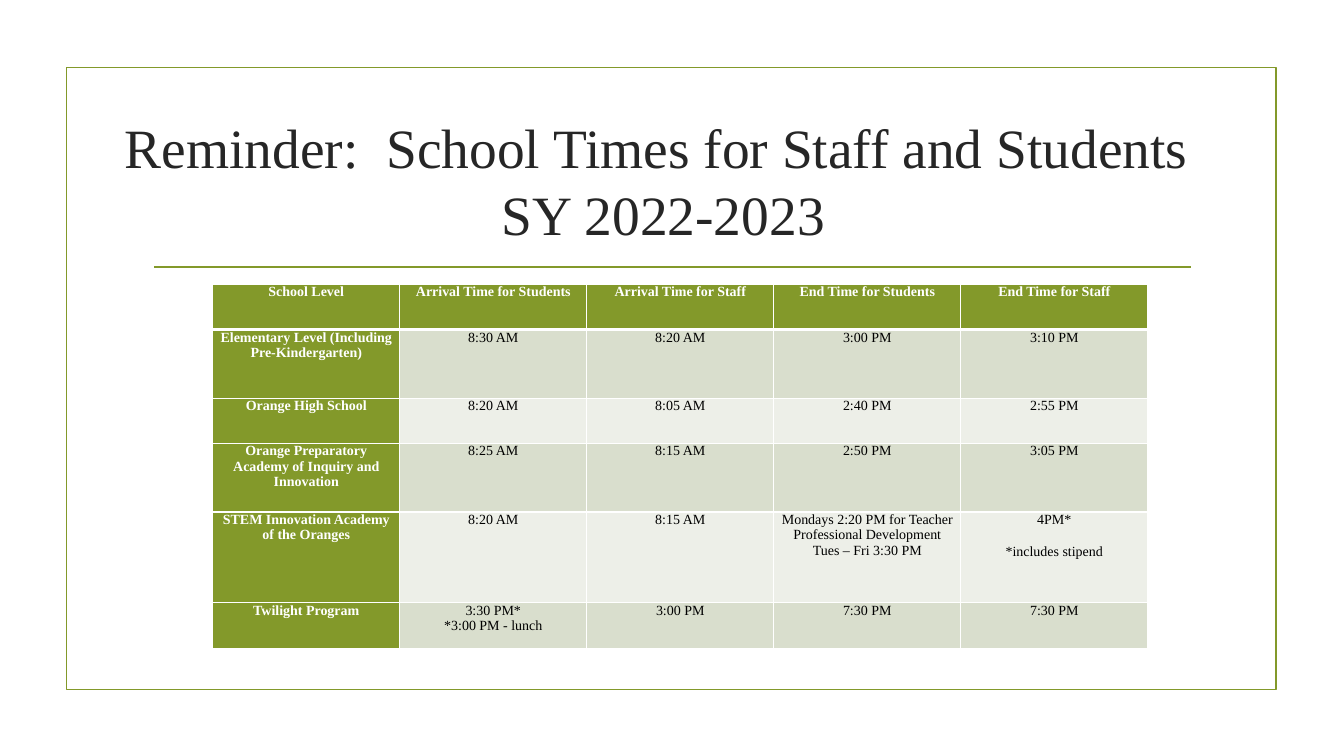
from lxml import etree
from pptx import Presentation
from pptx.dml.color import RGBColor
from pptx.enum.shapes import MSO_CONNECTOR, MSO_SHAPE
from pptx.enum.text import MSO_ANCHOR, PP_ALIGN
from pptx.oxml.ns import qn
from pptx.util import Inches, Pt

TITLE = ["Reminder:  School Times for Staff and Students ", "SY 2022-2023"]

# A cell with several paragraphs is a list.
SCHOOL_TIMES = [
    ["School Level", "Arrival Time for Students", "Arrival Time for Staff",
     "End Time for Students", "End Time for Staff"],
    ["Elementary Level (Including Pre-Kindergarten)",
     "8:30 AM", "8:20 AM", "3:00 PM", "3:10 PM"],
    ["Orange High School", "8:20 AM", "8:05 AM", "2:40 PM", "2:55 PM"],
    ["Orange Preparatory Academy of Inquiry and Innovation",
     "8:25 AM", "8:15 AM", "2:50 PM", "3:05 PM"],
    ["STEM Innovation Academy of the Oranges", "8:20 AM", "8:15 AM",
     ["Mondays 2:20 PM for Teacher Professional Development", "Tues – Fri 3:30 PM"],
     ["4PM*", "*includes stipend"]],
    ["Twilight Program", ["3:30 PM*", "*3:00 PM - lunch"],
     "3:00 PM", "7:30 PM", "7:30 PM"],
]
ROW_HEIGHTS = [0.45, 0.68, 0.45, 0.68, 0.9, 0.45]
COLUMN_WIDTH = 1.855
GAP_BEFORE = {"*includes stipend": Pt(11.5)}

FONT = "Times New Roman"
GREEN = RGBColor(0x83, 0x99, 0x2A)
DARK_BAND = RGBColor(0xD9, 0xDE, 0xCD)
LIGHT_BAND = RGBColor(0xED, 0xEF, 0xE8)
INK = RGBColor(0x26, 0x26, 0x26)
BLACK = RGBColor(0, 0, 0)
WHITE = RGBColor(0xFF, 0xFF, 0xFF)
CENTER = PP_ALIGN.CENTER
MIDDLE = MSO_ANCHOR.MIDDLE
TOP = MSO_ANCHOR.TOP
STRAIGHT = MSO_CONNECTOR.STRAIGHT
RECTANGLE = MSO_SHAPE.RECTANGLE


def add_span(para, text, size, color, bold=False):
    span = para.add_run()
    span.text = text
    span.font.name = FONT
    span.font.size = Pt(size)
    span.font.bold = bold
    span.font.color.rgb = color


def set_borders(cell, top, bottom):
    """Give the cell white borders; top and bottom are widths in points."""
    properties = cell._tc.get_or_add_tcPr()
    widths = {"lnL": 1, "lnR": 1, "lnT": top, "lnB": bottom}
    for index, (side, width) in enumerate(widths.items()):
        line = etree.Element(qn(f"a:{side}"), w=str(Pt(width)))
        fill = etree.SubElement(line, qn("a:solidFill"))
        etree.SubElement(fill, qn("a:srgbClr"), val=str(WHITE))
        properties.insert(index, line)


def add_frame(page):
    frame = page.shapes.add_shape(
        RECTANGLE, Inches(0.66), Inches(0.67), Inches(12), Inches(6.17))
    frame.shadow.inherit = False
    frame.fill.background()
    rule = page.shapes.add_connector(
        STRAIGHT, Inches(1.53), Inches(2.65), Inches(11.81), Inches(2.65))
    etree.SubElement(rule._element.spPr, qn("a:effectLst"))
    for shape in (frame, rule):
        shape.line.color.rgb = GREEN
        shape.line.width = Pt(1.25)


def add_title(page):
    box = page.shapes.add_textbox(
        Inches(0.82), Inches(1.07), Inches(11.52), Inches(1.43))
    frame = box.text_frame
    frame.word_wrap = True
    frame.vertical_anchor = MIDDLE
    para = frame.paragraphs[0]
    para.alignment = CENTER
    for index, line in enumerate(TITLE):
        if index:
            para.add_line_break()
        add_span(para, line, 39.6, INK)


def fill_cell(cell, content, row, column):
    heading = row == 0 or column == 0
    cell.margin_left = cell.margin_right = Inches(0.07)
    cell.margin_top = cell.margin_bottom = 0
    cell.vertical_anchor = TOP
    cell.fill.solid()
    band = DARK_BAND if row % 2 else LIGHT_BAND
    cell.fill.fore_color.rgb = GREEN if heading else band
    set_borders(cell, 3 if row == 1 else 1, 3 if row == 0 else 1)

    frame = cell.text_frame
    lines = content if isinstance(content, list) else [content]
    for index, line in enumerate(lines):
        para = frame.add_paragraph() if index else frame.paragraphs[0]
        para.alignment = CENTER
        if line in GAP_BEFORE:
            para.space_before = GAP_BEFORE[line]
        add_span(para, line, 10, WHITE if heading else BLACK, heading)


def add_times_table(page):
    columns = len(SCHOOL_TIMES[0])
    table = page.shapes.add_table(
        len(SCHOOL_TIMES), columns, Inches(2.11), Inches(2.82),
        Inches(COLUMN_WIDTH * columns), Inches(sum(ROW_HEIGHTS))).table
    for column in table.columns:
        column.width = Inches(COLUMN_WIDTH)
    for row, (height, contents) in enumerate(zip(ROW_HEIGHTS, SCHOOL_TIMES)):
        table.rows[row].height = Inches(height)
        for column, content in enumerate(contents):
            fill_cell(table.cell(row, column), content, row, column)


def main():
    deck = Presentation()
    deck.slide_width = Inches(13.33)
    deck.slide_height = Inches(7.5)
    page = deck.slides.add_slide(deck.slide_layouts[6])
    add_frame(page)
    add_title(page)
    add_times_table(page)
    deck.save("out.pptx")


if __name__ == "__main__":
    main()
